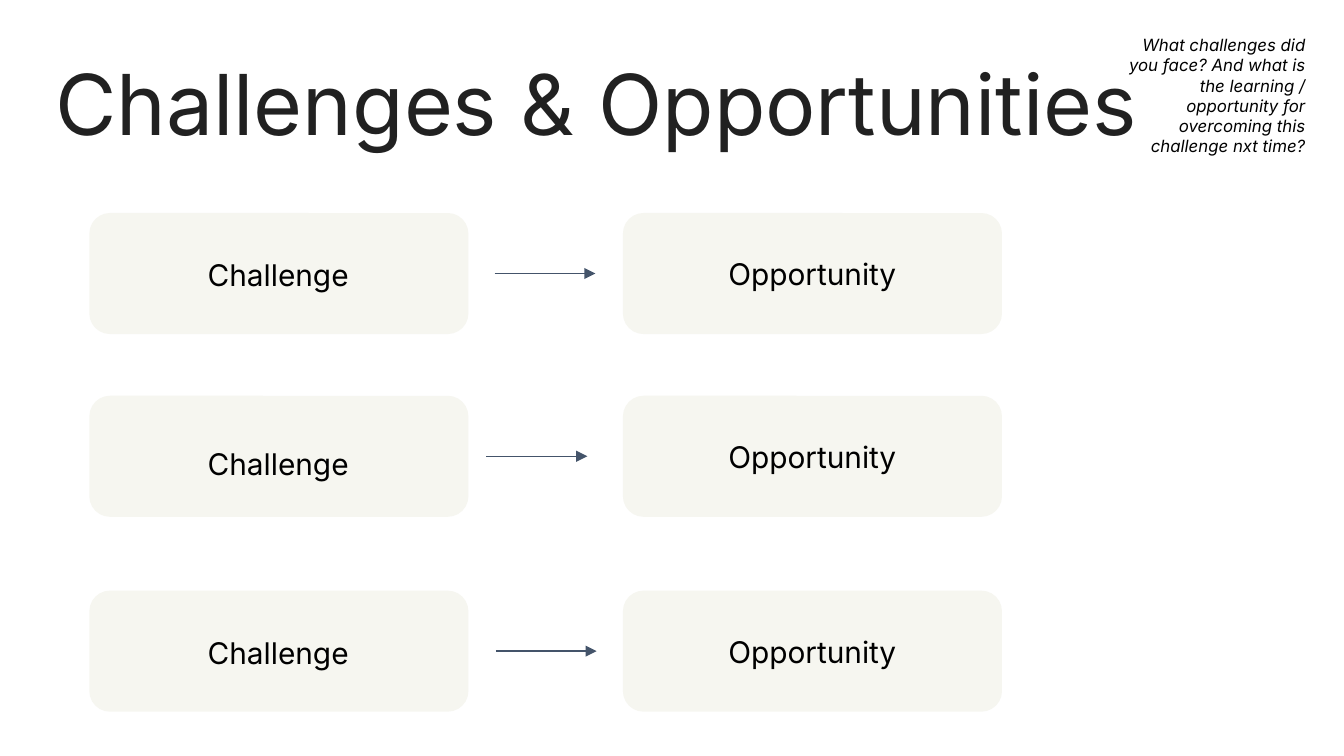
import pptx
import pptx.util
import pptx.dml.color
import pptx.enum.shapes
import pptx.enum.text
import lxml.etree
import pptx.oxml.ns

Inches = pptx.util.Inches
Align = pptx.enum.text.PP_ALIGN
Anchor = pptx.enum.text.MSO_ANCHOR
colors = {"card": "F6F6F0", "arrow": "44546A", "text": "000000", "title": "212121"}


def color(name):
    return pptx.dml.color.RGBColor.from_string(colors[name])


def write(box, text, size, align, anchor, ink="text", italic=False, insets=(0.1, 0.1)):
    frame = box.text_frame
    frame.word_wrap = True
    frame.vertical_anchor = anchor
    frame.margin_left = frame.margin_right = Inches(insets[0])
    frame.margin_top = frame.margin_bottom = Inches(insets[1])
    para = frame.paragraphs[0]
    para.alignment = align
    span = para.add_run()
    span.text = text
    span.font.name = "Inter"
    span.font.size = pptx.util.Pt(size)
    span.font.italic = italic
    span.font.color.rgb = color(ink)
    return para


deck = pptx.Presentation()
deck.slide_width = Inches(10)
deck.slide_height = Inches(10 * 9 / 16)
page = deck.slides.add_slide(deck.slide_layouts[6])

card_width, card_height = 2.81, 0.89
challenge_left, opportunity_left = 0.67, 4.64
arrow_length = 0.75
rows = [(1.59, 1.81, 3.68), (2.95, 3.22, 3.62), (4.4, 4.62, 3.69)]

for card_top, label_top, arrow_left in rows:
    for card_left in (challenge_left, opportunity_left):
        card = page.shapes.add_shape(
            pptx.enum.shapes.MSO_SHAPE.ROUNDED_RECTANGLE,
            Inches(card_left), Inches(card_top), Inches(card_width), Inches(card_height))
        card.shadow.inherit = False
        card.fill.solid()
        card.fill.fore_color.rgb = color("card")
        card.line.color.rgb = color("card")
        card.line.width = pptx.util.Pt(0.75)
    write(card, "Opportunity", 16, Align.CENTER, Anchor.MIDDLE)

    label = page.shapes.add_textbox(Inches(1.16), Inches(label_top), Inches(1.82), Inches(0.44))
    write(label, "Challenge", 16, Align.CENTER, Anchor.TOP)

    arrow_y = Inches(card_top + card_height / 2)
    arrow = page.shapes.add_connector(
        pptx.enum.shapes.MSO_CONNECTOR.STRAIGHT,
        Inches(arrow_left), arrow_y, Inches(arrow_left + arrow_length), arrow_y)
    arrow.line.color.rgb = color("arrow")
    arrow.line.width = pptx.util.Pt(0.75)
    outline = arrow.line._get_or_add_ln()
    lxml.etree.SubElement(outline, pptx.oxml.ns.qn("a:tailEnd"), type="triangle")
    lxml.etree.SubElement(outline.getparent(), pptx.oxml.ns.qn("a:effectLst"))

prompt = page.shapes.add_textbox(Inches(8.17), Inches(0.16), Inches(1.64), Inches(1.11))
write(prompt, "What challenges did you face? And what is the learning / opportunity for "
      "overcoming this challenge nxt time?", 9, Align.RIGHT, Anchor.TOP, italic=True)

title = page.shapes.add_textbox(Inches(0.34), Inches(0.49), Inches(9.32), Inches(0.63))
heading = write(title, "Challenges & Opportunities", 45, Align.LEFT, Anchor.MIDDLE,
                ink="title", insets=(0.07, 0.04))
heading.line_spacing = 0.9

deck.save("out.pptx")
